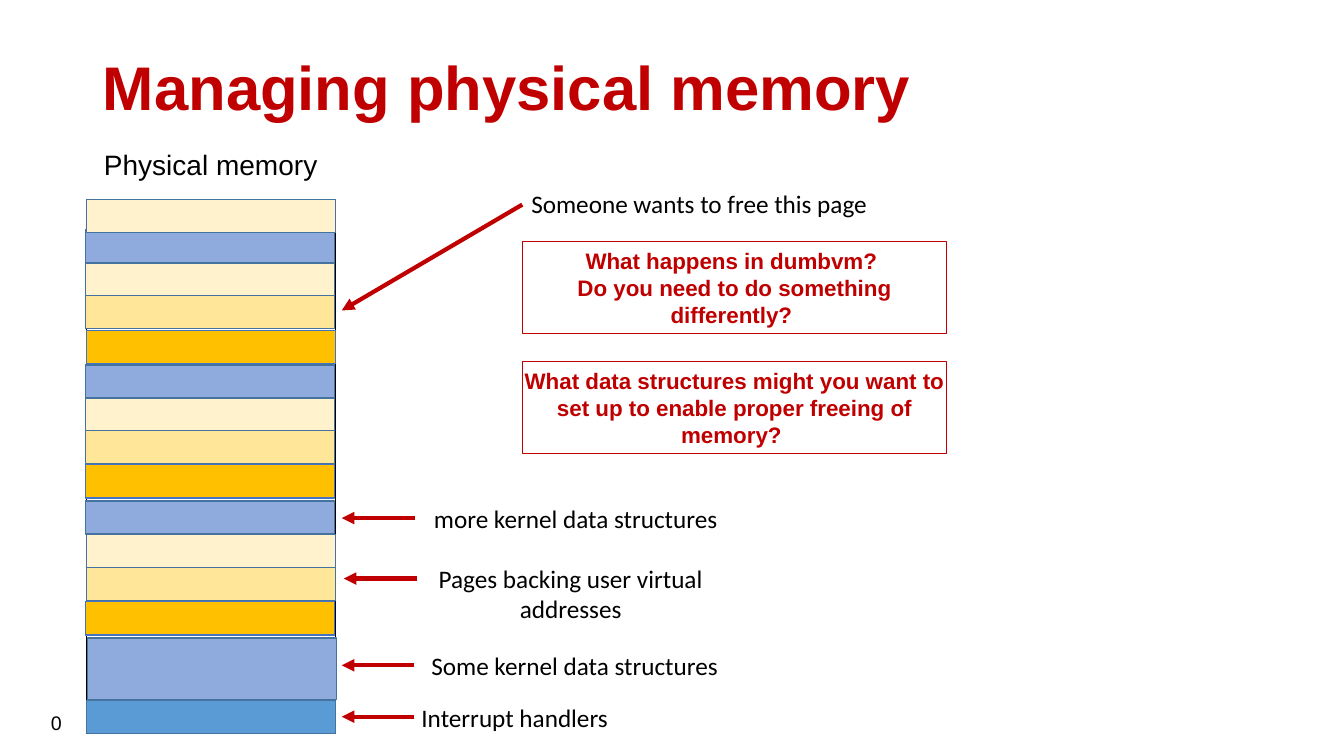
from dataclasses import dataclass

from pptx import Presentation
from pptx.dml.color import RGBColor
from pptx.enum.shapes import MSO_CONNECTOR, MSO_SHAPE
from pptx.enum.text import MSO_ANCHOR, MSO_AUTO_SIZE, PP_ALIGN
from pptx.oxml.ns import qn
from pptx.util import Inches, Pt
from lxml import etree

RECTANGLE = MSO_SHAPE.RECTANGLE
STRAIGHT = MSO_CONNECTOR.STRAIGHT
CENTER = PP_ALIGN.CENTER
LEFT = PP_ALIGN.LEFT
MIDDLE = MSO_ANCHOR.MIDDLE
FIT_SHAPE = MSO_AUTO_SIZE.SHAPE_TO_FIT_TEXT
FIT_NONE = MSO_AUTO_SIZE.NONE

COLORS = {
    "red": "C00000",
    "black": "000000",
    "handlers": "5B9BD5",
    "kernel": "8FAADC",
    "gold": "FFC000",
    "yellow": "FFE699",
    "cream": "FFF2CC",
    "edge": "43739E",
    "gold_edge": "4472C4",
}
COLUMN_WIDTH = 2.47
PAGE_HEIGHT = 0.33
LEFT_SIDE = 1


@dataclass
class Page:
    left: float
    top: float
    color: str
    height: float = PAGE_HEIGHT


@dataclass
class Label:
    text: str
    left: float
    top: float
    width: float
    height: float = 0.4
    font: str = "Calibri"
    size: int = 18
    inset: float = 0.1


@dataclass
class Arrow:
    start: tuple[float, float]
    end: tuple[float, float]
    source: str = ""


@dataclass
class Question:
    top: float
    lines: list[str]


PAGES = [
    Page(0.86, 6.95, "handlers"),
    Page(0.87, 6.33, "kernel", 0.61),
    Page(0.85, 5.97, "gold"),
    Page(0.86, 5.63, "yellow"),
    Page(0.86, 5.3, "cream"),
    Page(0.85, 4.97, "kernel"),
    Page(0.85, 4.61, "gold"),
    Page(0.85, 4.27, "yellow"),
    Page(0.85, 3.94, "cream"),
    Page(0.85, 3.62, "kernel"),
    Page(0.86, 3.28, "gold"),
    Page(0.85, 2.93, "yellow"),
    Page(0.85, 2.6, "cream"),
    Page(0.85, 2.28, "kernel"),
    Page(0.86, 1.98, "cream"),
]
LABELS = [
    Label("Physical memory", 0.79, 1.41, 2.6, 0.44, "Arial", 20, 0),
    Label("0", 0.33, 7, 0.46, 0.34, "Arial", 14, 0),
    Label("Interrupt handlers", 3.75, 6.92, 2.71),
    Label("Some kernel data structures", 4.11, 6.4, 3.18),
    Label("Pages backing user virtual addresses", 4.07, 5.54, 3.18, 0.71),
    Label("more kernel data structures", 4.12, 4.94, 3.18),
    Label("Someone wants to free this page", 4.97, 1.82, 3.93),
]
ARROWS = [
    Arrow((4.11, 7.11), (3.39, 7.11)),
    Arrow((4.11, 6.6), (3.39, 6.6), "Some kernel data structures"),
    Arrow((4.14, 5.74), (3.41, 5.74)),
    Arrow((4.12, 5.14), (3.39, 5.14), "more kernel data structures"),
    Arrow((5.18, 2.03), (3.39, 3.08)),
]
QUESTIONS = [
    Question(2.4, ["What happens in dumbvm? ",
                   "Do you need to do something differently? "]),
    Question(3.59, ["What data structures might you want to set up "
                    "to enable proper freeing of memory? "]),
]


def rgb(name: str) -> RGBColor:
    return RGBColor.from_string(COLORS[name])


def add_span(para, text: str, font: str, size: int, color: str, bold: bool = False) -> None:
    span = para.add_run()
    span.text = text
    span.font.name = font
    span.font.size = Pt(size)
    span.font.bold = bold
    span.font.color.rgb = rgb(color)


def set_frame(frame, inset: float) -> None:
    frame.word_wrap = True
    frame.auto_size = FIT_SHAPE
    frame.margin_left = frame.margin_right = Inches(inset)
    frame.margin_top = frame.margin_bottom = Inches(0.05)


def add_box(slide, left: float, top: float, width: float, height: float,
            edge: str, weight: float, fill: str = ""):
    box = slide.shapes.add_shape(
        RECTANGLE, Inches(left), Inches(top), Inches(width), Inches(height))
    box.shadow.inherit = False
    if fill:
        box.fill.solid()
        box.fill.fore_color.rgb = rgb(fill)
    else:
        box.fill.background()
    box.line.color.rgb = rgb(edge)
    box.line.width = Pt(weight)
    return box


def add_page(slide, page: Page) -> None:
    edge = "gold_edge" if page.color == "gold" else "edge"
    add_box(slide, page.left, page.top, COLUMN_WIDTH, page.height, edge, 1, page.color)


def add_label(slide, label: Label):
    box = slide.shapes.add_textbox(
        Inches(label.left), Inches(label.top), Inches(label.width), Inches(label.height))
    set_frame(box.text_frame, label.inset)
    para = box.text_frame.paragraphs[0]
    para.alignment = CENTER
    add_span(para, label.text, label.font, label.size, "black")
    return box


def add_arrow(slide, arrow: Arrow, label_boxes: dict) -> None:
    connector = slide.shapes.add_connector(
        STRAIGHT, *(Inches(value) for value in arrow.start + arrow.end))
    if arrow.source:
        connector.begin_connect(label_boxes[arrow.source], LEFT_SIDE)
    connector.line.color.rgb = rgb("red")
    connector.line.width = Pt(3)
    etree.SubElement(connector.line._get_or_add_ln(), qn("a:tailEnd"), type="triangle")
    etree.SubElement(connector._element.spPr, qn("a:effectLst"))


def add_question(slide, question: Question) -> None:
    box = add_box(slide, 5.18, question.top, 4.21, 0.91, "red", 0.75)
    frame = box.text_frame
    set_frame(frame, 0)
    for index, line in enumerate(question.lines):
        para = frame.add_paragraph() if index else frame.paragraphs[0]
        para.alignment = CENTER
        add_span(para, line, "Arial", 16, "red", True)


def set_title(slide, text: str) -> None:
    title = slide.shapes.title
    title.left, title.top = Inches(0.92), Inches(0.17)
    title.width, title.height = Inches(11.5), Inches(1.45)
    frame = title.text_frame
    frame.vertical_anchor = MIDDLE
    frame.auto_size = FIT_NONE
    para = frame.paragraphs[0]
    para.alignment = LEFT
    para.line_spacing = 0.9
    add_span(para, text, "Arial", 44, "red", True)


def main() -> None:
    deck = Presentation()
    deck.slide_width, deck.slide_height = Inches(13.33), Inches(7.5)
    slide = deck.slides.add_slide(deck.slide_layouts[5])
    set_title(slide, "Managing physical memory")
    add_box(slide, 0.86, 1.98, COLUMN_WIDTH, 5.3, "black", 1)
    for page in PAGES:
        add_page(slide, page)
    label_boxes = {label.text: add_label(slide, label) for label in LABELS}
    for arrow in ARROWS:
        add_arrow(slide, arrow, label_boxes)
    for question in QUESTIONS:
        add_question(slide, question)
    deck.save("out.pptx")


if __name__ == "__main__":
    main()
